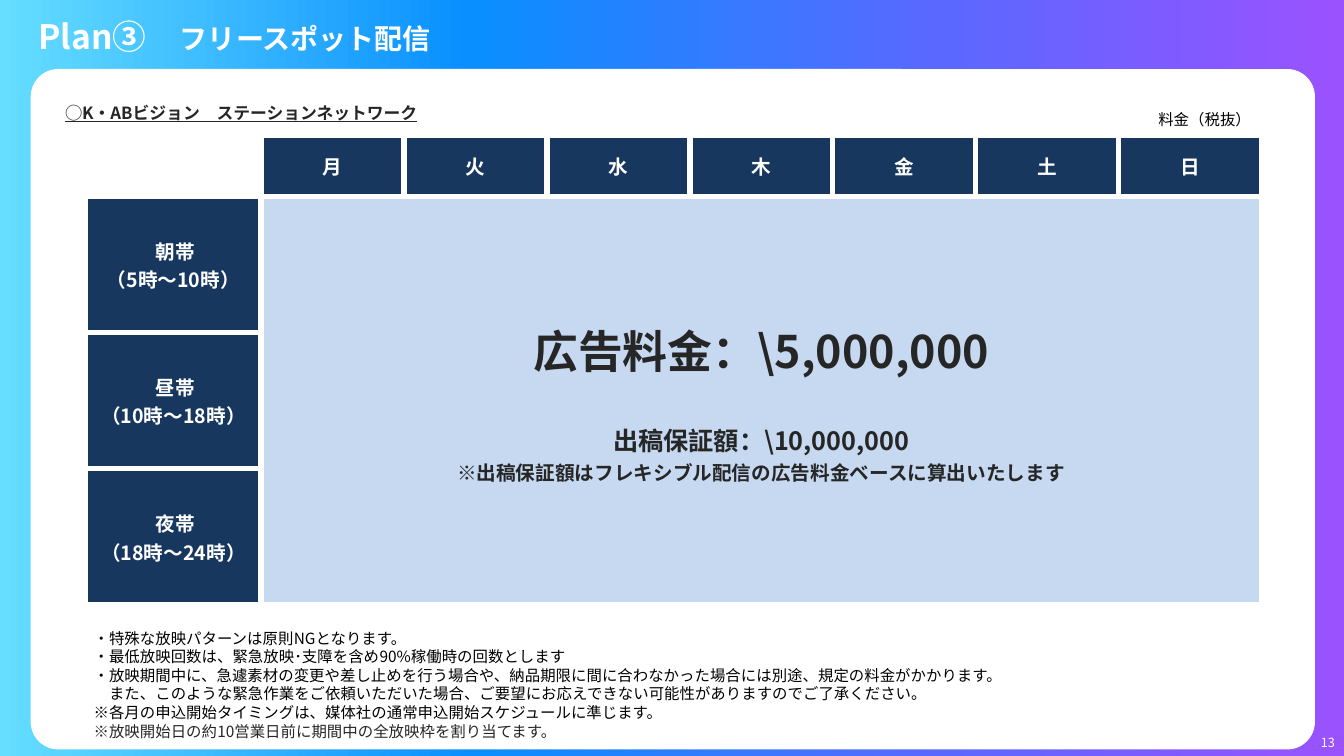
from dataclasses import dataclass

from lxml.etree import SubElement as Sub
from pptx import Presentation
from pptx.dml.color import RGBColor as Rgb
from pptx.enum.shapes import MSO_SHAPE as Kind
from pptx.enum.text import MSO_ANCHOR as Anchor, MSO_AUTO_SIZE as Fit, PP_ALIGN as Align
from pptx.oxml.ns import qn
from pptx.util import Pt


@dataclass(frozen=True)
class Theme:
    font: str = "Noto Sans CJK JP"
    white: str = "FFFFFF"
    black: str = "000000"
    ink: str = "262626"
    navy: str = "17375E"
    pale: str = "C6D9F1"
    blend: tuple = ((0, "65DEFF"), (35, "098FFF"), (70, "5A68FF"), (100, "9A52FF"))
    huge: int = 32
    head: int = 24
    sub: int = 20
    large: int = 18
    cell: int = 14
    label: int = 12
    note: int = 11
    page: int = 9


@dataclass(frozen=True)
class Box:
    left: float
    top: float
    width: float
    height: float

    def size(self) -> tuple:
        return Pt(self.left), Pt(self.top), Pt(self.width), Pt(self.height)


@dataclass(frozen=True)
class Line:
    text: str
    size: int
    color: str
    before: float = 0


@dataclass(frozen=True)
class Band:
    name: str
    hours: str


T = Theme()
DAYS = "月火水木金土日"
BANDS = [
    Band("朝帯", "（5時～10時）"),
    Band("昼帯", "（10時～18時）"),
    Band("夜帯", "（18時～24時）"),
]
PRICE = [
    Line(r"広告料金：\5,000,000", T.huge, T.ink),
    Line(r"出稿保証額：\10,000,000", T.large, T.ink, 28.5),
    Line("※出稿保証額はフレキシブル配信の広告料金ベースに算出いたします", T.cell, T.ink),
]
NOTES = [
    Line("・特殊な放映パターンは原則NGとなります。", T.note, T.black),
    Line("・最低放映回数は、緊急放映･支障を含め90%稼働時の回数とします", T.note, T.black),
    Line("・放映期間中に、急遽素材の変更や差し止めを行う場合や、納品期限に間に合わなかった場合には"
         "別途、規定の料金がかかります。", T.note, T.black),
    Line("　また、このような緊急作業をご依頼いただいた場合、ご要望にお応えできない可能性が"
         "ありますのでご了承ください。", T.note, T.black),
    Line("※各月の申込開始タイミングは、媒体社の通常申込開始スケジュールに準じます。",
         T.note, T.black),
    Line("※放映開始日の約10営業日前に期間中の全放映枠を割り当てます。", T.note, T.ink),
]


def write(frame, text: str, *, size: int, color: str, bold: bool = False,
          under: bool = False, align=Align.LEFT, before: float = 0,
          pitch=None, join: bool = False) -> None:
    """Add a paragraph, or with join a further run of the last one."""
    par = frame.paragraphs[-1]
    if par.runs and not join:
        par = frame.add_paragraph()
    par.alignment = align
    par.space_before = Pt(before)
    if pitch is not None:
        par.line_spacing = pitch
    run = par.add_run()
    run.text = text
    font = run.font
    font.name, font.size, font.bold = T.font, Pt(size), bold
    font.underline = under
    font.color.rgb = Rgb.from_string(color)
    Sub(font._element, qn("a:ea"), typeface=T.font)


def frame_at(slide, box: Box, inset: float = 7.2, top: float = 3.6, anchor=Anchor.TOP):
    frame = slide.shapes.add_textbox(*box.size()).text_frame
    frame.word_wrap = True
    frame.margin_left = frame.margin_right = Pt(inset)
    frame.margin_top = Pt(top)
    frame.vertical_anchor = anchor
    return frame


def shape_at(slide, kind, box: Box):
    shape = slide.shapes.add_shape(kind, *box.size())
    shape.shadow.inherit = False
    return shape


def blend(shape) -> None:
    """Fill the shape from left to right with the theme's colour stops."""
    shape.fill.gradient()
    shape.fill.gradient_angle = 0
    stops = shape.element.spPr.find(qn("a:gradFill")).find(qn("a:gsLst"))
    for stop in list(stops):
        stops.remove(stop)
    for place, color in T.blend:
        stop = Sub(stops, qn("a:gs"), pos=str(place * 1000))
        Sub(stop, qn("a:srgbClr"), val=color)


def dress(cell, color: str = "") -> None:
    """Give a cell its white borders, margins and fill."""
    cell.margin_left = cell.margin_right = cell.margin_top = Pt(0.72)
    cell.margin_bottom = Pt(0)
    cell.vertical_anchor = Anchor.MIDDLE
    props = cell._tc.get_or_add_tcPr()
    for side in ("lnL", "lnR", "lnT", "lnB"):
        edge = Sub(props, qn(f"a:{side}"), w=str(Pt(4.5)))
        Sub(Sub(edge, qn("a:solidFill")), qn("a:srgbClr"), val=T.white)
    if color:
        cell.fill.solid()
        cell.fill.fore_color.rgb = Rgb.from_string(color)
    else:
        cell.fill.background()


def draw_back(slide) -> None:
    back = shape_at(slide, Kind.RECTANGLE, Box(0, 0, 960, 540))
    blend(back)
    back.line.fill.background()
    panel = shape_at(slide, Kind.ROUNDED_RECTANGLE, Box(22.3, 49.7, 916.6, 485.3))
    panel.adjustments[0] = 0.04
    panel.fill.solid()
    panel.fill.fore_color.rgb = panel.line.color.rgb = Rgb.from_string(T.white)
    panel.line.width = Pt(0.75)


def draw_title(slide) -> None:
    title = slide.shapes.title
    title.element.getparent().append(title.element)
    title.left, title.top, title.width, title.height = Box(20.2, 7.9, 923.8, 35.3).size()
    frame = title.text_frame
    frame.auto_size, frame.vertical_anchor = Fit.NONE, Anchor.MIDDLE
    write(frame, "Plan③　", size=T.head, color=T.white, bold=True)
    write(frame, "フリースポット配信", size=T.sub, color=T.white, bold=True, join=True)


def draw_grid(slide) -> None:
    box = Box(61.2, 96.5, 840, 335.5)
    rows, cols = len(BANDS) + 1, len(DAYS) + 1
    table = slide.shapes.add_table(rows, cols, *box.size()).table
    table.first_row = table.horz_banding = False
    for i, col in enumerate(table.columns):
        col.width = Pt(102.1 if i else 125.3)
    for i, row in enumerate(table.rows):
        row.height = Pt(97.2 if i else 43.9)
    for i in range(rows):
        for j in range(cols):
            color = T.pale if i and j else T.navy if i or j else ""
            dress(table.cell(i, j), color)
    look = dict(bold=True, align=Align.CENTER)
    for j, day in enumerate(DAYS, 1):
        write(table.cell(0, j).text_frame, day, size=T.cell, color=T.white, **look)
    for i, band in enumerate(BANDS, 1):
        for text in (" " + band.name, band.hours):
            write(table.cell(i, 0).text_frame, text, size=T.cell, color=T.white, **look)
    main = table.cell(1, 1)
    main.merge(table.cell(rows - 1, cols - 1))
    for line in PRICE:
        write(main.text_frame, line.text, size=line.size, color=line.color,
              before=line.before, **look)


def draw_texts(slide) -> None:
    page = frame_at(slide, Box(937.6, 521.3, 22, 18), inset=0, anchor=Anchor.MIDDLE)
    write(page, "13", size=T.page, color=T.white, align=Align.CENTER)
    fee = frame_at(slide, Box(586.8, 74.9, 313.9, 20.9))
    write(fee, "料金（税抜）", size=T.note, color=T.black, align=Align.RIGHT)
    name = frame_at(slide, Box(39.6, 71.3, 758.9, 41))
    write(name, "◯K・ABビジョン　ステーションネットワーク", size=T.label, color=T.ink,
          bold=True, under=True, pitch=0.9)
    notes = frame_at(slide, Box(59.8, 432, 840.2, 108), top=17)
    for line in NOTES:
        write(notes, line.text, size=line.size, color=line.color, pitch=Pt(13.3))


def main() -> None:
    deck = Presentation()
    deck.slide_width, deck.slide_height = Pt(960), Pt(540)
    slide = deck.slides.add_slide(deck.slide_layouts[5])
    draw_back(slide)
    draw_title(slide)
    draw_texts(slide)
    draw_grid(slide)
    deck.save("out.pptx")


if __name__ == "__main__":
    main()
